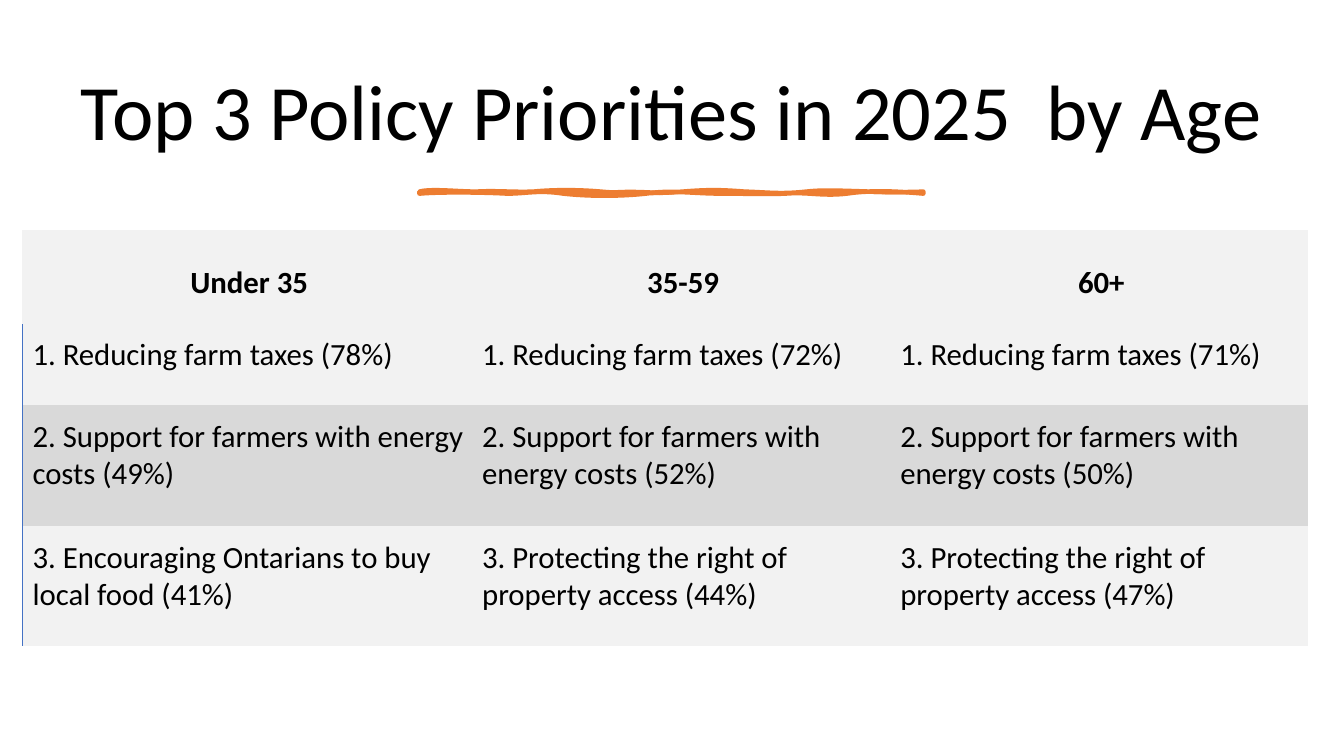
from dataclasses import dataclass
from lxml import etree
from pptx import Presentation
from pptx.dml.color import RGBColor
from pptx.enum.text import MSO_ANCHOR as Anchor, MSO_AUTO_SIZE as AutoSize, PP_ALIGN as Align
from pptx.oxml.ns import qn
from pptx.util import Cm, Pt


@dataclass(frozen=True)
class Theme:
    """Font, colours and type sizes of the slide."""
    font: str = "Calibri"
    text: str = "000000"
    accent: str = "ED7D31"
    border: str = "4472C4"
    light: str = "F2F2F2"
    dark: str = "D9D9D9"
    title_size: int = 56
    table_size: int = 22


THEME = Theme()
NO_STYLE = "{2D5ABB26-0587-4C30-8999-92F81FD0307C}"
COL_WIDTHS = (11.33, 10.54, 10.54)
ROW_HEIGHTS = (2.38, 2.03, 3.05, 3.04)
ROWS = (
    ("Under 35", "35-59", "60+"),
    ("1. Reducing farm taxes (78%)", "1. Reducing farm taxes (72%)",
     "1. Reducing farm taxes (71%)"),
    ("2. Support for farmers with energy costs (49%)",
     "2. Support for farmers with energy costs (52%)",
     "2. Support for farmers with energy costs (50%)"),
    ("3. Encouraging Ontarians to buy local food (41%)",
     "3. Protecting the right of property access (44%)",
     "3. Protecting the right of property access (47%)"),
)
STROKE_LEFT, STROKE_TOP, STROKE_RIGHT, STROKE_BOTTOM = 10.57, 4.83, 23.27, 4.88
OUTLINE_CURVES = (
    ((10.87, 4.75), (11.53, 4.83), (12.01, 4.83)),
    ((12.5, 4.8), (12.93, 4.85), (13.44, 4.83)),
    ((13.94, 4.78), (14.58, 4.78), (15.14, 4.83)),
    ((15.67, 4.88), (16.59, 4.88), (17.2, 4.83)),
    ((17.83, 4.78), (18.14, 4.78), (18.77, 4.83)),
    ((19.38, 4.85), (19.66, 4.9), (20.32, 4.83)),
    ((20.98, 4.75), (22.02, 4.88), (23.27, 4.83)),
    ((23.29, 4.85), (23.27, 4.85), (23.27, 4.88)),
    ((22.73, 4.83), (21.97, 4.78), (21.34, 4.88)),
    ((20.7, 4.95), (20.35, 4.83), (19.79, 4.88)),
    ((19.2, 4.9), (18.97, 4.88), (18.21, 4.88)),
    ((17.45, 4.88), (16.94, 4.78), (16.28, 4.88)),
    ((15.6, 4.95), (14.86, 4.95), (14.2, 4.88)),
    ((13.56, 4.78), (13.28, 4.88), (12.78, 4.88)),
    ((12.27, 4.85), (11.13, 4.83), (10.57, 4.88)),
    ((10.57, 4.85), (10.57, 4.83), (10.57, 4.83)),
)
FILL_CURVES = (
    ((10.97, 4.8), (11.48, 4.78), (12.14, 4.83)),
    ((12.78, 4.85), (12.9, 4.88), (13.56, 4.83)),
    ((14.22, 4.78), (14.58, 4.88), (15.14, 4.83)),
    ((15.7, 4.75), (16.23, 4.78), (16.94, 4.83)),
    ((17.65, 4.85), (18.39, 4.75), (18.9, 4.83)),
    ((19.38, 4.88), (20.37, 4.78), (20.96, 4.83)),
    ((21.54, 4.85), (22.15, 4.9), (23.27, 4.83)),
    ((23.27, 4.83), (23.27, 4.85), (23.27, 4.88)),
    ((22.33, 4.93), (22.25, 4.88), (21.34, 4.88)),
    ((20.42, 4.8), (20.22, 4.85), (19.28, 4.88)),
    ((18.31, 4.88), (18.19, 4.78), (17.2, 4.88)),
    ((16.23, 4.98), (16.18, 4.83), (15.77, 4.88)),
    ((15.34, 4.9), (14.53, 4.9), (13.82, 4.88)),
    ((13.13, 4.83), (12.8, 4.85), (12.14, 4.88)),
    ((11.48, 4.88), (11.2, 4.8), (10.57, 4.88)),
    ((10.57, 4.85), (10.57, 4.83), (10.57, 4.83)),
)


def rgb(value):
    """Turn a hex string into a colour."""
    return RGBColor.from_string(value)


def format_paragraph(p, size, align, bold=False):
    """Set the alignment and font of a paragraph."""
    p.alignment = align
    p.font.name = THEME.font
    p.font.size = Pt(size)
    p.font.bold = bold
    p.font.color.rgb = rgb(THEME.text)


def set_title(s, text):
    """Fill and place the title placeholder."""
    title = s.shapes.title
    title.left, title.top, title.width, title.height = Cm(1.78), Cm(1.17), Cm(30.3), Cm(3.48)
    tf = title.text_frame
    tf.text = text
    tf.auto_size = AutoSize.NONE
    tf.vertical_anchor = Anchor.MIDDLE
    p = tf.paragraphs[0]
    p.line_spacing = 0.9
    format_paragraph(p, THEME.title_size, Align.CENTER)


def add_curve_path(path_list, curves, size, **options):
    """Add one closed path of cubic curves, given in slide centimetres."""
    outline = etree.SubElement(path_list, qn("a:path"), w=str(size[0]), h=str(size[1]), **options)

    def add_step(tag, points):
        step = etree.SubElement(outline, qn(tag))
        for x, y in points:
            etree.SubElement(step, qn("a:pt"), x=str(Cm(x - STROKE_LEFT)), y=str(Cm(y - STROKE_TOP)))

    add_step("a:moveTo", [(STROKE_LEFT, STROKE_TOP)])
    for curve in curves:
        add_step("a:cubicBezTo", curve)
    etree.SubElement(outline, qn("a:close"))


def add_brush_stroke(s):
    """Draw the wavy rule under the title."""
    builder = s.shapes.build_freeform(Cm(STROKE_LEFT), Cm(STROKE_TOP))
    builder.add_line_segments([(Cm(STROKE_RIGHT), Cm(STROKE_BOTTOM))])
    sp = builder.convert_to_shape()
    path_list = next(sp._element.iter(qn("a:pathLst")))
    path_list.remove(path_list[0])
    size = sp.width, sp.height
    add_curve_path(path_list, OUTLINE_CURVES, size, fill="none")
    add_curve_path(path_list, FILL_CURVES, size, stroke="0")
    sp.shadow.inherit = False
    sp.fill.solid()
    sp.fill.fore_color.rgb = rgb(THEME.accent)
    sp.line.color.rgb = rgb(THEME.accent)
    sp.line.width = Pt(3.25)


def add_left_border(cell):
    """Give a cell a thin left border."""
    ln = etree.Element(qn("a:lnL"), w=str(Pt(1)))
    fill = etree.SubElement(ln, qn("a:solidFill"))
    etree.SubElement(fill, qn("a:srgbClr"), val=THEME.border)
    cell._tc.get_or_add_tcPr().insert(0, ln)


def fill_cell(cell, text, color, header):
    """Write and format one table cell."""
    cell.text = text
    cell.margin_left, cell.margin_top = Cm(0.26), Cm(0.08)
    cell.margin_right, cell.margin_bottom = Cm(0.15), Cm(0.57)
    cell.vertical_anchor = Anchor.BOTTOM if header else Anchor.MIDDLE
    cell.fill.solid()
    cell.fill.fore_color.rgb = rgb(color)
    align = Align.CENTER if header else Align.LEFT
    format_paragraph(cell.text_frame.paragraphs[0], THEME.table_size, align, header)


def add_priority_table(s):
    """Add the table of priorities by age group."""
    frame = s.shapes.add_table(len(ROWS), len(COL_WIDTHS), Cm(0.56), Cm(5.79),
                               Cm(sum(COL_WIDTHS)), Cm(sum(ROW_HEIGHTS)))
    table = frame.table
    table.horz_banding = False
    table._tbl.tblPr.find(qn("a:tableStyleId")).text = NO_STYLE
    for column, width in zip(table.columns, COL_WIDTHS):
        column.width = Cm(width)
    for r, (texts, height) in enumerate(zip(ROWS, ROW_HEIGHTS)):
        table.rows[r].height = Cm(height)
        color = THEME.dark if r == 2 else THEME.light
        for c, text in enumerate(texts):
            fill_cell(table.cell(r, c), text, color, header=r == 0)
        if r > 0:
            add_left_border(table.cell(r, 0))


def main():
    """Build and save the slide."""
    prs = Presentation()
    prs.slide_width, prs.slide_height = Cm(33.87), Cm(19.05)
    s = prs.slides.add_slide(prs.slide_layouts[5])
    set_title(s, "Top 3 Policy Priorities in 2025  by Age")
    add_brush_stroke(s)
    add_priority_table(s)
    prs.save("out.pptx")


if __name__ == "__main__":
    main()
